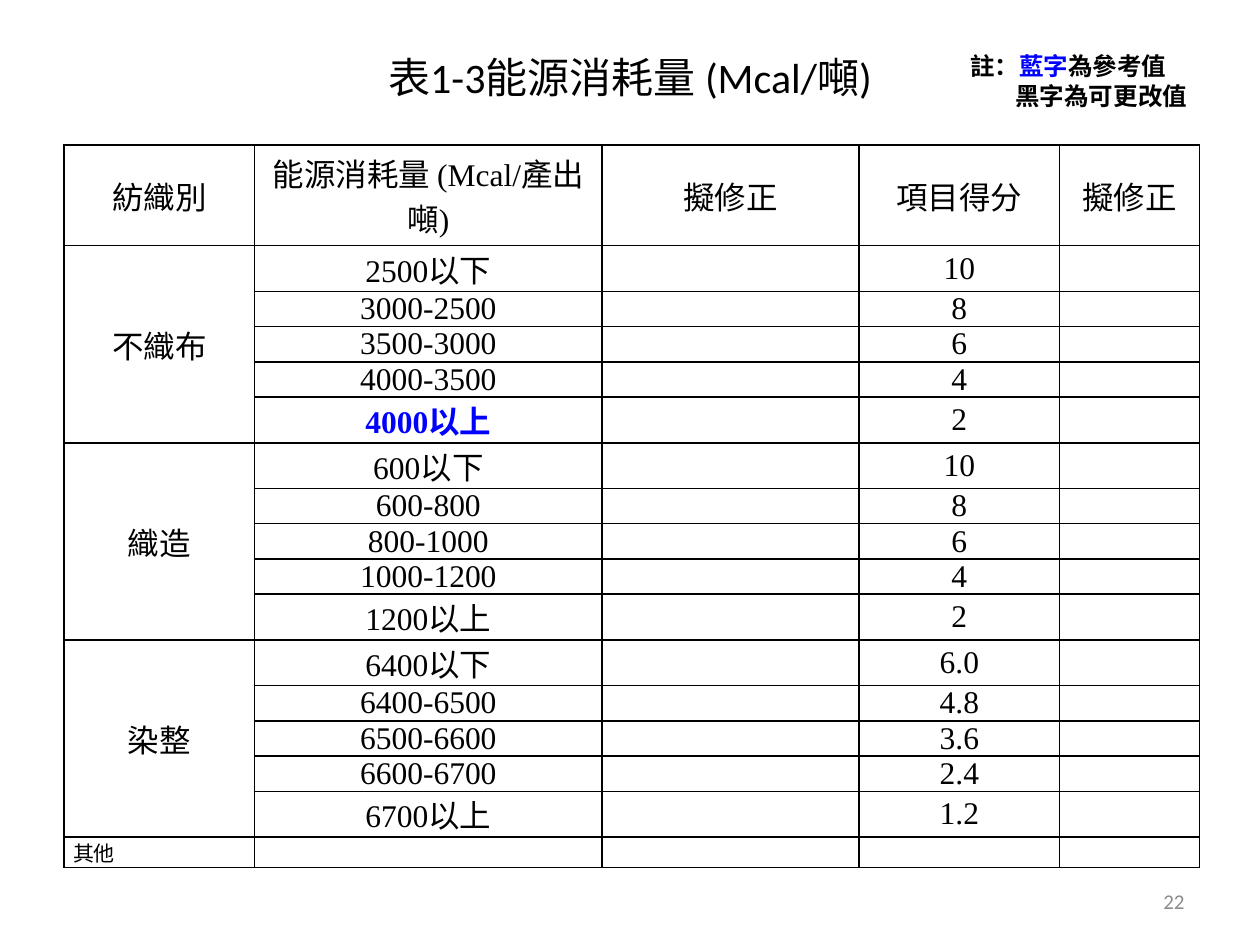
from lxml.etree import SubElement
from pptx import Presentation
from pptx.dml.color import RGBColor
from pptx.enum.text import MSO_ANCHOR as ANCHOR, PP_ALIGN as ALIGN
from pptx.oxml import parse_xml
from pptx.oxml.ns import nsdecls, qn
from pptx.util import Inches, Pt


def rgb(color):
    return RGBColor.from_string(color)


def add_text(p, text, size=18, font="Times New Roman", color="000000", bold=False, align=None):
    p.alignment = align
    r = p.add_run()
    r.text = text
    r.font.size, r.font.name, r.font.bold = Pt(size), font, bold
    r.font.color.rgb = rgb(color)
    SubElement(r.font._element, qn("a:ea"), typeface="Noto Sans CJK TC")


prs = Presentation()
prs.slide_width, prs.slide_height = Inches(10), Inches(7.5)
s = prs.slides.add_slide(prs.slide_layouts[5])

title = s.shapes.title
title.left, title.top, title.width, title.height = map(Inches, (0.75, 0.29, 8.5, 0.63))
title.text_frame.vertical_anchor = ANCHOR.MIDDLE
add_text(title.text_frame.paragraphs[0], "表1-3能源消耗量 (Mcal/噸)", size=24,
         font="Calibri", align=ALIGN.CENTER)

headers = ["紡織別", "能源消耗量 (Mcal/產出噸)", "擬修正", "項目得分", "擬修正"]
groups = [
    ("不織布", ["2500以下", "3000-2500", "3500-3000", "4000-3500", "4000以上"],
     ["10", "8", "6", "4", "2"]),
    ("織造", ["600以下", "600-800", "800-1000", "1000-1200", "1200以上"],
     ["10", "8", "6", "4", "2"]),
    ("染整", ["6400以下", "6400-6500", "6500-6600", "6600-6700", "6700以上"],
     ["6.0", "4.8", "3.6", "2.4", "1.2"]),
]
rows = [headers]
for name, ranges, scores in groups:
    for i, (usage, score) in enumerate(zip(ranges, scores)):
        rows.append([name if i == 0 else "", usage, "", score, ""])
rows.append(["其他", "", "", "", ""])

col_widths = [1.51, 2.76, 2.04, 1.59, 1.11]
row_heights = [0.8] + [0.36, 0.28, 0.28, 0.28, 0.36] * len(groups) + [0.24]
frame = s.shapes.add_table(len(rows), len(headers), Inches(0.51), Inches(1.15),
                           Inches(sum(col_widths)), Inches(sum(row_heights)))
table = frame.table
table.first_row = table.horz_banding = False
for col, width in zip(table.columns, col_widths):
    col.width = Inches(width)
for row, height in zip(table.rows, row_heights):
    row.height = Inches(height)

for i, row in enumerate(rows):
    for j, text in enumerate(row):
        cell = table.cell(i, j)
        cell.margin_left = cell.margin_right = Inches(0.07)
        cell.margin_top = cell.margin_bottom = 0
        cell.vertical_anchor = ANCHOR.MIDDLE
        cell.fill.solid()
        cell.fill.fore_color.rgb = rgb("FFFFFF")
        for k, side in enumerate(("lnL", "lnR", "lnT", "lnB")):
            cell._tc.tcPr.insert(k, parse_xml(
                f'<a:{side} {nsdecls("a")} w="{Pt(1)}"><a:solidFill>'
                f'<a:srgbClr val="000000"/></a:solidFill></a:{side}>'))
        p = cell.text_frame.paragraphs[0]
        other, blue = text == "其他", text == "4000以上"
        if text:
            add_text(p, text, size=12 if other else 18, bold=blue,
                     color="0000FF" if blue else "000000",
                     align=ALIGN.LEFT if other else ALIGN.CENTER)
        else:
            SubElement(p._p, qn("a:endParaRPr"), sz="1200")

for g in range(len(groups)):
    top = 1 + 5 * g
    table.cell(top, 0).merge(table.cell(top + 4, 0))

number = s.shapes.add_textbox(Inches(7.17), Inches(6.95), Inches(2.33), Inches(0.4))
tf = number.text_frame
tf.word_wrap = True
tf.vertical_anchor = ANCHOR.MIDDLE
add_text(tf.paragraphs[0], "22", size=12, font="Calibri", color="8C8C8C", align=ALIGN.RIGHT)

note = s.shapes.add_textbox(Inches(7.6), Inches(0.36), Inches(1.98), Inches(0.57))
tf = note.text_frame
tf.word_wrap = True
p = tf.paragraphs[0]
for text, font, color in [("註", "Calibri", "000000"), ("：", "Noto Sans CJK TC", "000000"),
                          ("藍字", "Noto Sans CJK TC", "0000FF"),
                          ("為參考值", "Noto Sans CJK TC", "000000")]:
    add_text(p, text, size=14, font=font, color=color, bold=True)
p = tf.add_paragraph()
add_text(p, "黑字為可更改值", size=14, font="Noto Sans CJK TC", bold=True)
p._p.get_or_add_pPr().set("marL", str(Inches(0.36)))

prs.save("out.pptx")
